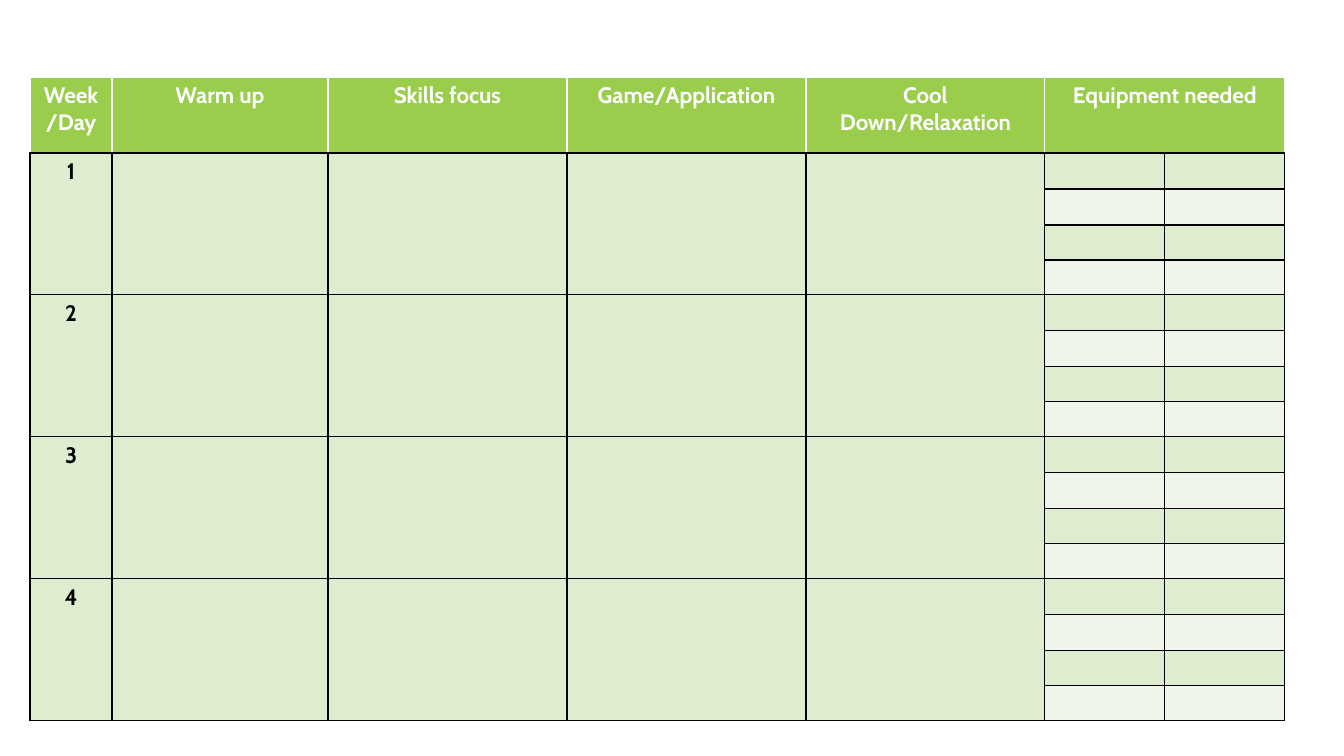
from lxml.etree import SubElement
from pptx import Presentation
from pptx.dml.color import RGBColor
from pptx.enum.text import PP_ALIGN
from pptx.oxml.ns import qn
from pptx.util import Pt

# Content
HEADINGS = ["Week/Day", "Warm up", "Skills focus", "Game/Application",
            "Cool Down/Relaxation", "Equipment needed"]
WEEKS = ["1", "2", "3", "4"]

# Layout in px
PX = 914400 / 100.8
SLIDE = (1344, 756)
LEFT, TOP = 30, 77
COLUMNS = [82, 216, 239, 239, 239, 120, 120]
HEADER_HEIGHT = 76
WEEK_ROWS = [36, 36, 35, 35]
EQUIPMENT = 5  # first of the two equipment columns

COLORS = {"header": "9ACD4C", "band": "DEEDD0", "light": "EFF6E9",
          "white": "FFFFFF", "black": "000000"}


def emu(px):
    return round(px * PX)


def set_borders(cell, side_color, top_color):
    properties = cell._tc.get_or_add_tcPr()
    sides = {"lnL": side_color, "lnR": side_color, "lnT": top_color, "lnB": "black"}
    for side, color in sides.items():
        line = SubElement(properties, qn("a:" + side), w=str(Pt(1)))
        fill = SubElement(line, qn("a:solidFill"))
        SubElement(fill, qn("a:srgbClr"), val=COLORS[color])


def write(cell, text, color):
    cell.text = text
    paragraph = cell.text_frame.paragraphs[0]
    paragraph.alignment = PP_ALIGN.CENTER
    font = paragraph.font
    font.name, font.size, font.bold = "Cabin", Pt(16), True
    font.color.rgb = RGBColor.from_string(COLORS[color])


def main():
    prs = Presentation()
    prs.slide_width, prs.slide_height = map(emu, SLIDE)
    slide = prs.slides.add_slide(prs.slide_layouts[6])

    # Planner grid
    heights = [HEADER_HEIGHT] + WEEK_ROWS * len(WEEKS)
    planner = slide.shapes.add_table(
        len(heights), len(COLUMNS), emu(LEFT), emu(TOP),
        emu(sum(COLUMNS)), emu(sum(heights))).table
    planner.horz_banding = False
    for column, width in zip(planner.columns, COLUMNS):
        column.width = emu(width)
    for row, height in zip(planner.rows, heights):
        row.height = emu(height)

    # Fills and borders
    for r in range(len(heights)):
        for c in range(len(COLUMNS)):
            cell = planner.cell(r, c)
            if r == 0:
                fill = "header"
                set_borders(cell, "white", "white")
            else:
                fill = "light" if c >= EQUIPMENT and r % 2 == 0 else "band"
                set_borders(cell, "black", "black")
                if c > 0:
                    cell.margin_top = cell.margin_bottom = 0
            cell.fill.solid()
            cell.fill.fore_color.rgb = RGBColor.from_string(COLORS[fill])

    # Headings
    planner.cell(0, EQUIPMENT).merge(planner.cell(0, EQUIPMENT + 1))
    for c, heading in enumerate(HEADINGS):
        write(planner.cell(0, c), heading, "white")

    # Weeks
    for i, week in enumerate(WEEKS):
        first = 1 + i * len(WEEK_ROWS)
        last = first + len(WEEK_ROWS) - 1
        for c in range(EQUIPMENT):
            planner.cell(first, c).merge(planner.cell(last, c))
        write(planner.cell(first, 0), week, "black")

    prs.save("out.pptx")


if __name__ == "__main__":
    main()
